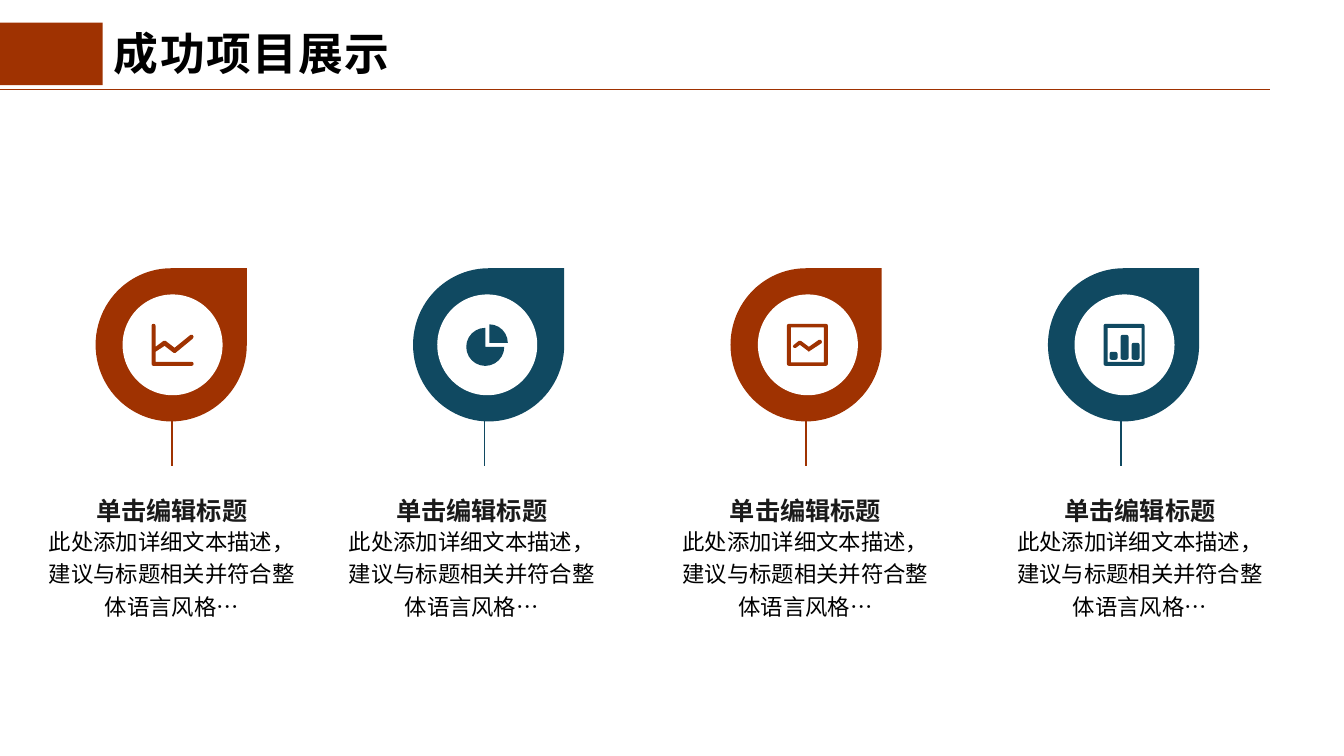
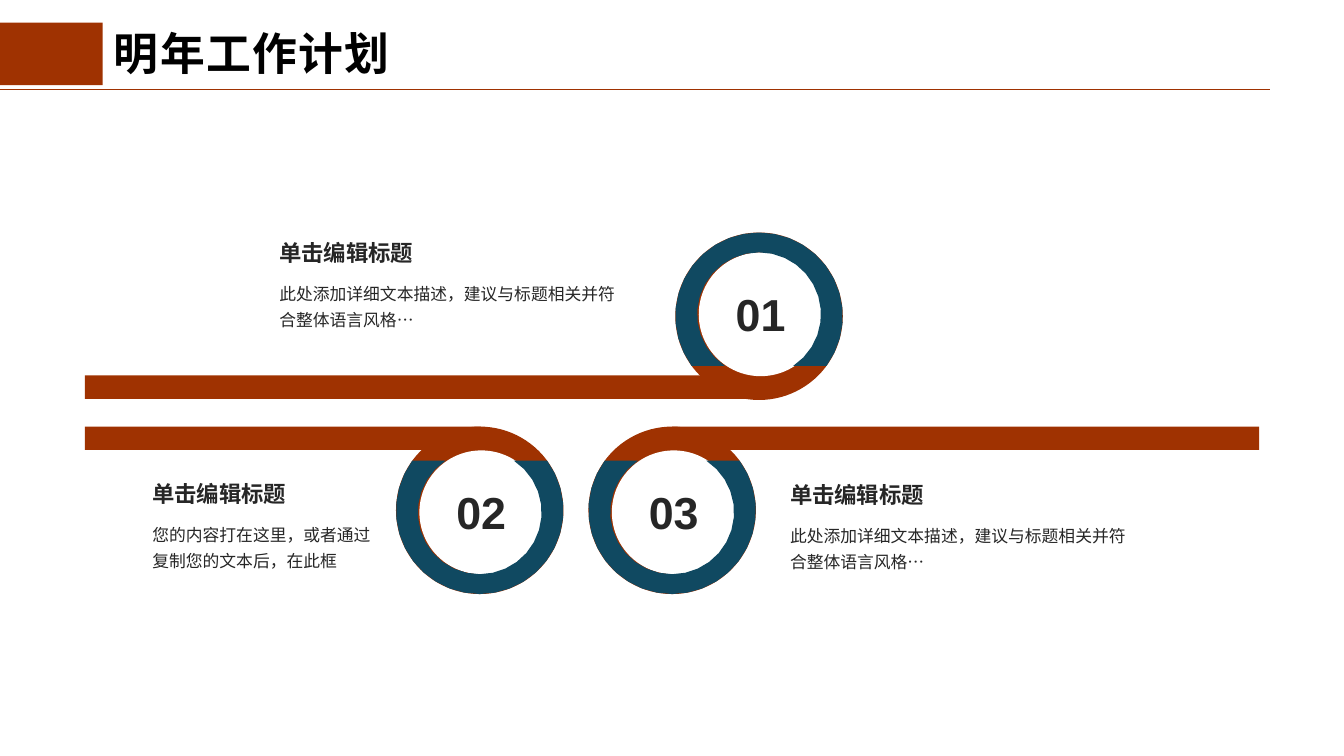
"""Build two slides: a row of project pins and a three-step plan of rings."""
from dataclasses import dataclass
from math import asin, cos, degrees, radians, sin

from lxml import etree
from pptx import Presentation
from pptx.dml.color import RGBColor
from pptx.enum.shapes import MSO_CONNECTOR, MSO_SHAPE
from pptx.enum.text import MSO_ANCHOR, PP_ALIGN
from pptx.oxml.ns import qn
from pptx.util import Cm, Pt

RECT, OVAL, TEAR = MSO_SHAPE.RECTANGLE, MSO_SHAPE.OVAL, MSO_SHAPE.TEAR
STRAIGHT = MSO_CONNECTOR.STRAIGHT
LEFT, CENTER = PP_ALIGN.LEFT, PP_ALIGN.CENTER
TOP, MIDDLE, BOTTOM = MSO_ANCHOR.TOP, MSO_ANCHOR.MIDDLE, MSO_ANCHOR.BOTTOM


@dataclass(frozen=True)
class Theme:
    rust: str = "9F3201"
    teal: str = "104961"
    white: str = "FFFFFF"
    black: str = "000000"
    heading: str = "1A1A1A"
    ink: str = "262626"
    font: str = "Arial"
    title_size: int = 32
    pin_heading_size: int = 18
    body_size: int = 16
    note_size: int = 12


THEME = Theme()
HEADING = "单击编辑标题"
DETAIL = "此处添加详细文本描述，建议与标题相关并符合整体语言风格…"
INSETS = (0.25, 0.13, 0.25, 0.13)

PINS_TITLE = "成功项目展示"
PINS = [
    dict(icon="line", color=THEME.rust, stem=4.33, hole=4.35, caption=4.33),
    dict(icon="pie", color=THEME.teal, stem=12.21, hole=12.28, caption=11.89),
    dict(icon="picture", color=THEME.rust, stem=20.31, hole=20.36, caption=20.3),
    dict(icon="bars", color=THEME.teal, stem=28.25, hole=28.34, caption=28.73),
]
PIN_LEFT, PIN_STEP = 2.41, 8

PLAN_TITLE = "明年工作计划"
STEPS = [
    dict(number="01", detail=DETAIL, center=(19.13, 7.97), side=1,
         bar=(2.14, 19.38), note=(6.79, 5.89), note_width=9.37),
    dict(number="02", detail="您的内容打在这里，或者通过复制您的文本后，在此框",
         center=(12.09, 12.86), side=-1,
         bar=(2.14, 12.12), note=(3.59, 11.96), note_width=6.15),
    dict(number="03", detail=DETAIL, center=(16.94, 12.86), side=-1,
         bar=(16.94, 31.73), note=(19.66, 12), note_width=9.37),
]
RING_RADIUS, HOLE_RADIUS, CUT = 2.11, 1.56, 1.25
HOLE_SHIFT, BAR_HEIGHT = 0.05, 0.59


def arc(x, y, radius, start, end, steps=8):
    """Return points on an arc; angles run clockwise from the right."""
    angles = [radians(start + (end - start) * i / steps) for i in range(steps + 1)]
    return [(x + radius * cos(a), y + radius * sin(a)) for a in angles]


def rounded(x, y, width, height, radius=2):
    """Return the outline of a rounded rectangle."""
    left, right = x + radius, x + width - radius
    top, bottom = y + radius, y + height - radius
    corners = [(left, top), (right, top), (right, bottom), (left, bottom)]
    return [point for i, (cx, cy) in enumerate(corners)
            for point in arc(cx, cy, radius, 180 + 90 * i, 270 + 90 * i, 2)]


def box(x, y, width, height):
    return [(x, y), (x + width, y), (x + width, y + height), (x, y + height)]


ICON_SIZE, ICON_GRID = 1.06, 42
FRAME = rounded(0, 0, 41, 42)
ICONS = {
    "line": [[(41, 15), (24, 29), (22, 29), (13, 22), (4, 28), (4, 38), (40, 38),
              (41.5, 38.5), (42, 40), (41.5, 41.5), (40, 42), (2, 42), (0.5, 41.5),
              (0, 40), (0, 2), (0.5, 0.5), (2, 0), (3.5, 0.5), (4, 2), (4, 23),
              (12, 17), (14, 17), (23, 24), (39, 11), (41, 11), (42, 13)]],
    "pie": [[(23, 19)] + arc(23, 19, 18.5, -90, 0, 6),
            [(19, 23)] + arc(19, 23, 19, 0, 270, 18)],
    "picture": [FRAME, box(4, 3.5, 33, 35),
                [(7, 21), (12, 17), (14, 17), (22, 23), (32, 16), (34, 16), (35, 18),
                 (34.5, 19.5), (23, 27), (22, 28), (21, 27), (13, 21), (9, 24),
                 (7, 24), (6, 22.5)]],
    "bars": [FRAME, box(4, 4, 34, 34), rounded(6, 28, 8, 8),
             rounded(17, 11, 8, 25), rounded(28, 19, 8, 17)],
}


def rgb(color):
    return RGBColor.from_string(color)


def paint(shape, color):
    shape.shadow.inherit = False
    shape.fill.solid()
    shape.fill.fore_color.rgb = rgb(color)
    shape.line.fill.background()
    return shape


def add_solid(shapes, kind, left, top, width, height, color):
    return paint(shapes.add_shape(kind, Cm(left), Cm(top), Cm(width), Cm(height)), color)


def add_disc(shapes, x, y, radius, color):
    return add_solid(shapes, OVAL, x - radius, y - radius, 2 * radius, 2 * radius, color)


def add_outline(shapes, contours, left, top, unit, color):
    """Draw closed contours whose grid unit is given in centimetres."""
    first, *others = [[(Cm(x * unit), Cm(y * unit)) for x, y in contour]
                      for contour in contours]
    builder = shapes.build_freeform(*first[0])
    builder.add_line_segments(first[1:])
    for contour in others:
        builder.move_to(*contour[0])
        builder.add_line_segments(contour[1:])
    return paint(builder.convert_to_shape(Cm(left), Cm(top)), color)


def add_rule(shapes, start, end, color, weight):
    rule = shapes.add_connector(STRAIGHT, *(Cm(v) for v in start + end))
    rule.line.color.rgb = rgb(color)
    rule.line.width = Pt(weight)
    etree.SubElement(rule._element.spPr, qn("a:effectLst"))


def write(shape, text, *, size, color, bold=False, align=LEFT, anchor=TOP,
          insets=INSETS, line_spacing=None, space_before=0, tracking=0):
    """Put one formatted paragraph into a shape."""
    frame = shape.text_frame
    frame.word_wrap = True
    frame.vertical_anchor = anchor
    (frame.margin_left, frame.margin_top,
     frame.margin_right, frame.margin_bottom) = (Cm(v) for v in insets)
    paragraph = frame.paragraphs[0]
    paragraph.alignment = align
    paragraph.line_spacing = line_spacing
    paragraph.space_before = Pt(space_before)
    run = paragraph.add_run()
    run.text = text
    run.font.name, run.font.size, run.font.bold = THEME.font, Pt(size), bold
    run.font.color.rgb = rgb(color)
    if tracking:
        run._r.get_or_add_rPr().set("spc", str(tracking * 100))


def add_text(shapes, left, top, width, height, text, **style):
    write(shapes.add_textbox(Cm(left), Cm(top), Cm(width), Cm(height)), text, **style)


def start_slide(deck, title):
    """Add a blank slide with the shared header and return its shapes."""
    shapes = deck.slides.add_slide(deck.slide_layouts[6]).shapes
    add_rule(shapes, (0, 2.26), (32, 2.26), THEME.rust, 0.5)
    add_text(shapes, 2.62, 0.56, 20.22, 1.45, title, size=THEME.title_size,
             color=THEME.black, bold=True, anchor=BOTTOM, line_spacing=0.9,
             insets=(0.25, 0.13, 0.25, 0), tracking=1)
    add_solid(shapes, RECT, 0, 0.57, 2.59, 1.58, THEME.rust)
    return shapes


def add_pin(shapes, left, pin):
    parts = shapes.add_group_shape().shapes
    color, hole = pin["color"], pin["hole"]
    add_solid(parts, TEAR, left, 6.76, 3.81, 3.86, color)
    add_rule(parts, (pin["stem"], 10.57), (pin["stem"], 11.74), color, 1)
    add_solid(parts, OVAL, hole - 1.26, 7.42, 2.52, 2.54, THEME.white)
    add_outline(parts, ICONS[pin["icon"]], hole - ICON_SIZE / 2, 8.16,
                ICON_SIZE / ICON_GRID, color)
    captions = [
        (HEADING, 12.34, 4.85, 0.84, THEME.pin_heading_size, THEME.heading, True),
        (DETAIL, 13.18, 6.6, 2.39, THEME.body_size, THEME.black, False),
    ]
    for text, top, width, height, size, ink, bold in captions:
        add_text(shapes, pin["caption"] - width / 2, top, width, height, text,
                 size=size, color=ink, bold=bold, align=CENTER, insets=(0, 0, 0, 0),
                 line_spacing=1.2, space_before=size * 0.2)


def ring_band(side):
    """Return the ring outline, cut below (side 1) or above (side -1)."""
    outer = degrees(asin(CUT / RING_RADIUS))
    inner = degrees(asin((CUT + HOLE_SHIFT) / HOLE_RADIUS))
    band = (arc(0, 0, RING_RADIUS, 180 - outer, 360 + outer, 24)
            + arc(0, -HOLE_SHIFT, HOLE_RADIUS, 360 + inner, 180 - inner, 24))
    return [(x, y * side) for x, y in band]


def add_step(shapes, step):
    parts = shapes.add_group_shape().shapes
    (x, y), side, (start, end) = step["center"], step["side"], step["bar"]
    bar_top = 9.46 if side > 0 else 10.75
    add_solid(parts, RECT, start, bar_top, end - start, BAR_HEIGHT, THEME.rust)
    add_disc(parts, x, y, RING_RADIUS, THEME.rust)
    hole = add_disc(parts, x + 0.04, y - side * HOLE_SHIFT, HOLE_RADIUS, THEME.white)
    write(hole, step["number"], size=THEME.title_size, color=THEME.ink, bold=True,
          align=CENTER, anchor=MIDDLE, insets=(0.25, 0.1, 0.25, 0.13))
    add_outline(parts, [ring_band(side)], x, y, 1, THEME.teal)
    left, top = step["note"]
    add_text(shapes, left, top, step["note_width"], 0.94, HEADING,
             size=THEME.body_size, color=THEME.ink, bold=True)
    add_text(shapes, left, top + 0.97, step["note_width"], 1.52, step["detail"],
             size=THEME.note_size, color=THEME.ink, line_spacing=1.3)


def main():
    deck = Presentation()
    deck.slide_width, deck.slide_height = Cm(33.87), Cm(19.05)
    shapes = start_slide(deck, PINS_TITLE)
    for index, pin in enumerate(PINS):
        add_pin(shapes, PIN_LEFT + PIN_STEP * index, pin)
    shapes = start_slide(deck, PLAN_TITLE)
    for step in STEPS:
        add_step(shapes, step)
    deck.save("out.pptx")


if __name__ == "__main__":
    main()
